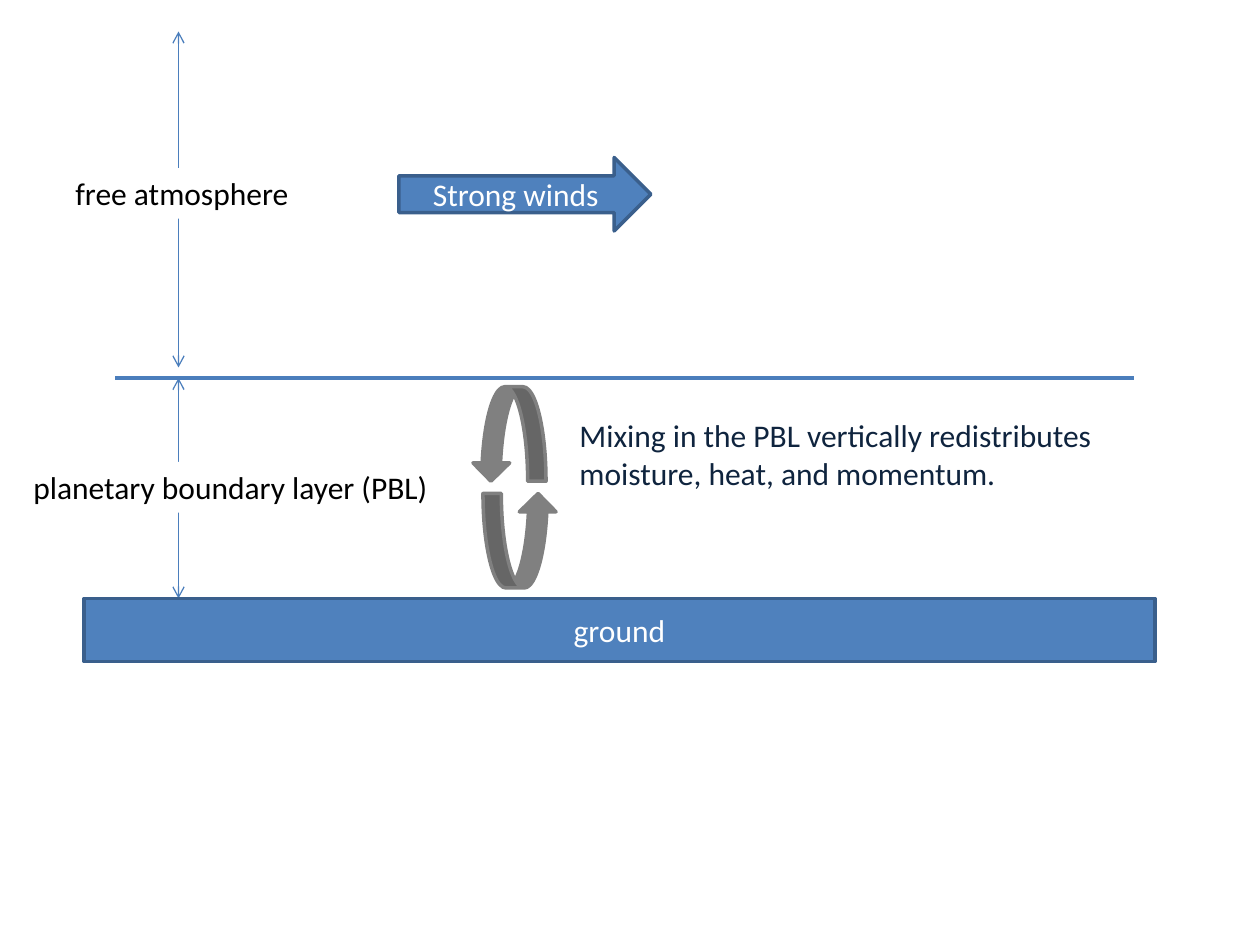
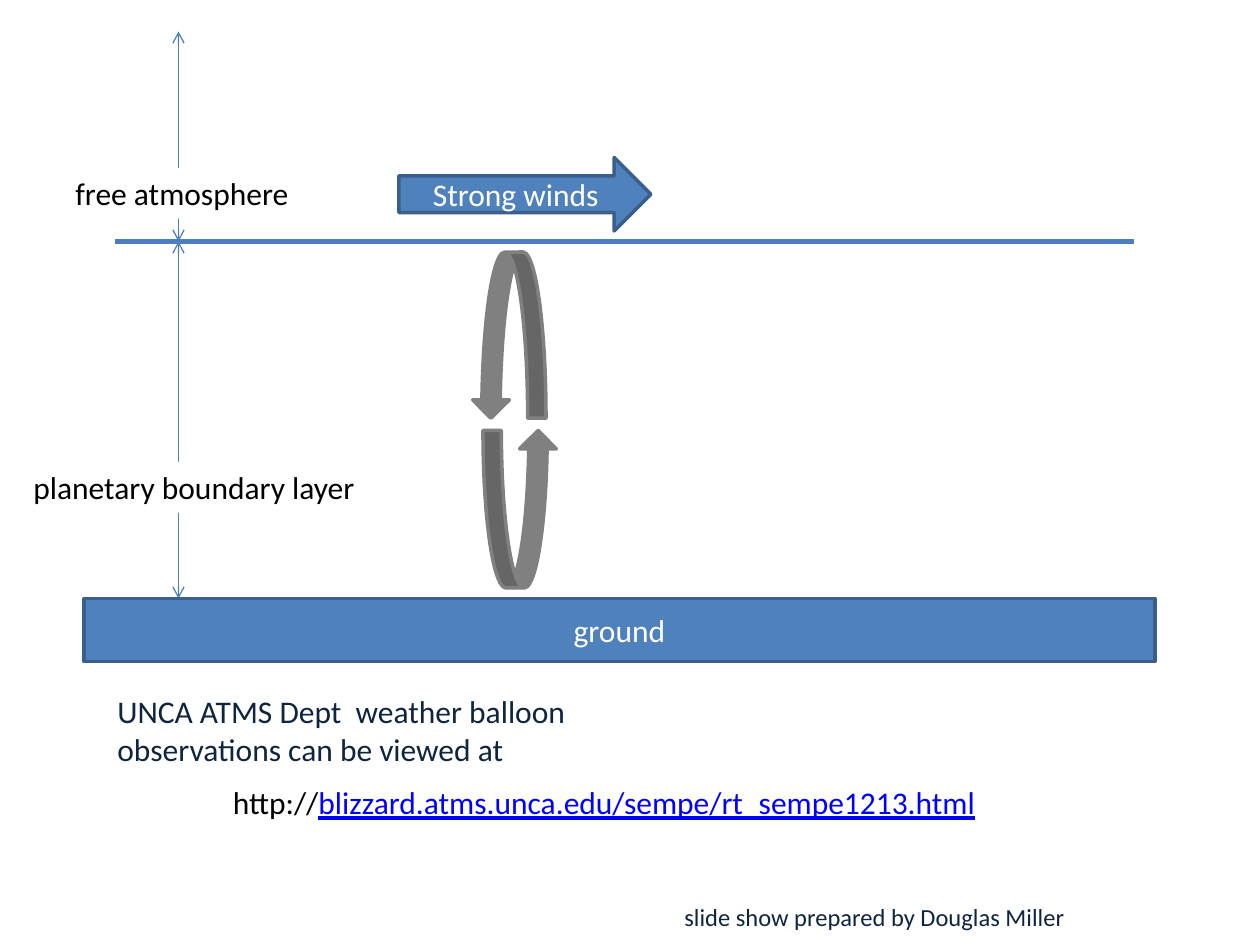
from collections import namedtuple
from lxml.etree import SubElement as Sub
from pptx import Presentation
from pptx.dml.color import RGBColor as Rgb
from pptx.enum.shapes import MSO_CONNECTOR as Link, MSO_SHAPE as Kind
from pptx.enum.text import MSO_ANCHOR as Anchor, MSO_AUTO_SIZE as Fit, PP_ALIGN as Align
from pptx.oxml.ns import qn
from pptx.util import Pt

Box = namedtuple("Box", "x y w h")
FONT = "Calibri"
BLUE, EDGE, RULE = "4F81BD", "3A5F8C", "4B7EBC"
GRAY, NAVY, LINK = "808080", "0F243E", "0000FF"
WHITE, BLACK = "FFFFFF", "000000"
LEFT, WIDE, FLOOR = 48, 612, 342
AXIS = 54


def hue(code):
    return Rgb.from_string(code)


def write(frame, words, size=18, color=BLACK, align=Align.LEFT,
          anchor=Anchor.TOP, wrap=True, link=""):
    frame.word_wrap = wrap
    frame.vertical_anchor = anchor
    para = frame.paragraphs[0]
    para.alignment = align
    for part, tint in ((words, color), (link, LINK)):
        if part:
            run = para.add_run()
            run.text = part
            run.font.name = FONT
            run.font.size = Pt(size)
            run.font.color.rgb = hue(tint)
            run.font.underline = tint == LINK


def note(slide, box, words, fill=None, **style):
    shape = slide.shapes.add_textbox(*map(Pt, box))
    if fill:
        shape.fill.solid()
        shape.fill.fore_color.rgb = hue(fill)
    write(shape.text_frame, words, **style)
    shape.text_frame.auto_size = Fit.SHAPE_TO_FIT_TEXT


def solid(slide, kind, box, fill, edge, words="", turn=0):
    shape = slide.shapes.add_shape(kind, *map(Pt, box))
    shape.shadow.inherit = False
    shape.fill.solid()
    shape.fill.fore_color.rgb = hue(fill)
    shape.line.color.rgb = hue(edge)
    shape.line.width = Pt(2)
    shape.rotation = turn
    if words:
        write(shape.text_frame, words, color=WHITE,
              align=Align.CENTER, anchor=Anchor.MIDDLE)


def line(slide, start, end, width=0.75, tips=()):
    link = slide.shapes.add_connector(Link.STRAIGHT, *map(Pt, start + end))
    link.line.color.rgb = hue(RULE)
    link.line.width = Pt(width)
    stroke = link.line._get_or_add_ln()
    for tip in tips:
        Sub(stroke, qn("a:" + tip), type="arrow")
    Sub(link._element.spPr, qn("a:effectLst"))


def sky(slide, box):
    mid = box.x + AXIS
    line(slide, (mid, box.y + box.h), (mid, box.y), tips=("headEnd", "tailEnd"))
    note(slide, Box(box.x - 12, box.y + 78, 140, 29), "free atmosphere",
         fill=WHITE, wrap=False)
    solid(slide, Kind.RIGHT_ARROW, Box(box.x + 180, box.y + 72, 144, 42),
          BLUE, EDGE, "Strong winds")


def layer(slide, box, name, width, gap, split):
    mid, base = box.x + AXIS, box.y + box.h
    line(slide, (box.x + 18, box.y), (box.x + box.w - 12, box.y), 2.75)
    for end in (box.y, base):
        line(slide, (mid, base - 66), (mid, end), tips=("tailEnd",))
    note(slide, Box(box.x - 36, base - 78, width, 29), name,
         fill=WHITE, wrap=False)
    top, low = box.y + gap, box.y + split
    solid(slide, Kind.CURVED_UP_ARROW, Box(box.x + 222, top, 42, low - top),
          GRAY, GRAY, turn=180)
    solid(slide, Kind.CURVED_UP_ARROW,
          Box(box.x + 228, low + 7, 42, base - low - 13), GRAY, GRAY)


def scene(deck, edge, clear, name, width, gap, split):
    slide = deck.slides.add_slide(deck.slide_layouts[6])
    sky(slide, Box(LEFT, 18, WIDE, edge - 18 - clear))
    layer(slide, Box(LEFT, edge, WIDE, FLOOR - edge), name, width, gap, split)
    solid(slide, Kind.RECTANGLE, Box(LEFT, FLOOR, WIDE, 36), BLUE, EDGE, "ground")
    return slide


def credits(slide, box):
    note(slide, Box(box.x, box.y, 288, 51),
         "UNCA ATMS Dept  weather balloon observations can be viewed at",
         color=NAVY)
    note(slide, Box(box.x + 66, box.y + 52, 444, 29), "http://", wrap=False,
         link="blizzard.atms.unca.edu/sempe/rt_sempe1213.html")
    note(slide, Box(box.x + 324, box.y + 120, 330, 24),
         "slide show prepared by Douglas Miller", size=14, color=NAVY)


def main():
    deck = Presentation()
    deck.slide_width, deck.slide_height = Pt(720), Pt(540)
    calm = scene(deck, 216, 6, "planetary boundary layer (PBL)", 243, 5, 59)
    note(calm, Box(324, 234, 312, 51),
         "Mixing in the PBL vertically redistributes moisture, heat, and momentum.",
         color=NAVY)
    deep = scene(deck, 138, 0, "planetary boundary layer", 200, 6, 101)
    credits(deep, Box(60, 392, 654, 148))
    deck.save("out.pptx")


if __name__ == "__main__":
    main()
